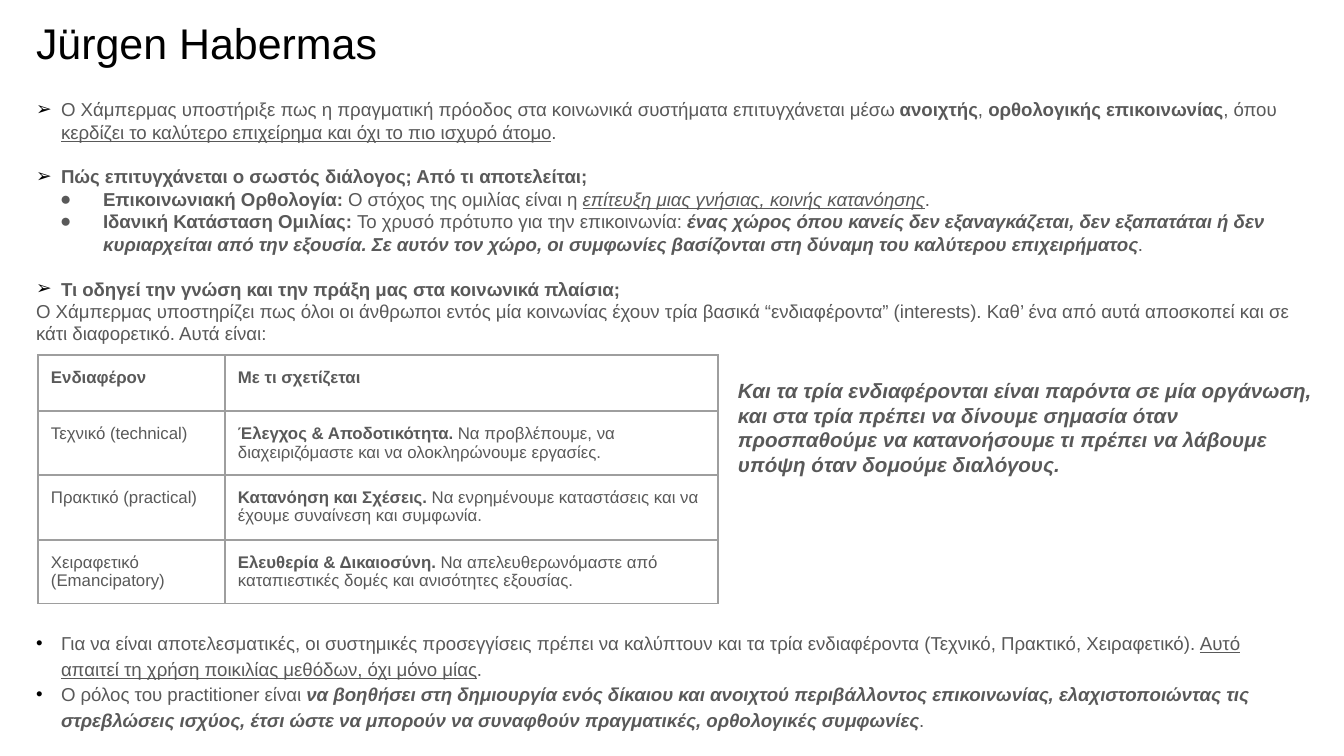
from pptx import Presentation
from pptx.dml.color import RGBColor
from pptx.enum.text import MSO_ANCHOR, MSO_AUTO_SIZE, PP_ALIGN
from pptx.oxml.ns import qn
from pptx.util import Emu, Pt
from lxml.etree import SubElement

EMU_PER_PX = 914400 / 134.4
GRAY, BLACK, BORDER = "595959", "000000", "9E9E9E"
INSET = 13
STYLES = {
    "": {},
    "b": {"bold": True},
    "u": {"underline": True},
    "iu": {"italic": True, "underline": True},
    "bi": {"bold": True, "italic": True},
}
BULLETS = {
    "arrow": ("➢", BLACK, 25, -25),
    "disc": ("●", GRAY, 67, -43),
    "dot": ("•", BLACK, 25, -25),
}
BODY = [
    ("arrow", {}, [
        ("Ο Χάμπερμας υποστήριξε πως η πραγματική πρόοδος στα κοινωνικά συστήματα επιτυγχάνεται μέσω ", ""),
        ("ανοιχτής", "b"), (", ", ""), ("ορθολογικής επικοινωνίας", "b"), (", όπου ", ""),
        ("κερδίζει το καλύτερο επιχείρημα και όχι το πιο ισχυρό άτομο", "u"), (".", "")]),
    ("arrow", {"space_before": Pt(12)}, [
        ("Πώς επιτυγχάνεται ο σωστός διάλογος; Από τι αποτελείται;", "b")]),
    ("disc", {}, [
        ("Επικοινωνιακή Ορθολογία: ", "b"), ("Ο στόχος της ομιλίας είναι η ", ""),
        ("επίτευξη μιας γνήσιας, κοινής κατανόησης", "iu"), (".", "")]),
    ("disc", {}, [
        ("Ιδανική Κατάσταση Ομιλίας: ", "b"), ("Το χρυσό πρότυπο για την επικοινωνία: ", ""),
        ("ένας χώρος όπου κανείς δεν εξαναγκάζεται, δεν εξαπατάται ή δεν κυριαρχείται από την εξουσία. "
         "Σε αυτόν τον χώρο, οι συμφωνίες βασίζονται στη δύναμη του καλύτερου επιχειρήματος", "bi"),
        (".", "")]),
    ("arrow", {"space_before": Pt(12)}, [
        ("Τι οδηγεί την γνώση και την πράξη μας στα κοινωνικά πλαίσια;", "b")]),
    (None, {}, [
        ("Ο Χάμπερμας υποστηρίζει πως όλοι οι άνθρωποι εντός μία κοινωνίας έχουν τρία βασικά “ενδιαφέροντα” "
         "(interests). Καθ’ ένα από αυτά αποσκοπεί και σε κάτι διαφορετικό. Αυτά είναι:", "")]),
    ("dot", {"space_before": Pt(152), "line_spacing": 1.15}, [
        ("Για να είναι αποτελεσματικές, οι συστημικές προσεγγίσεις πρέπει να καλύπτουν και τα τρία "
         "ενδιαφέροντα (Τεχνικό, Πρακτικό, Χειραφετικό). ", ""),
        ("Αυτό απαιτεί τη χρήση ποικιλίας μεθόδων, όχι μόνο μίας", "u"), (".", "")]),
    ("dot", {"line_spacing": 1.15}, [
        ("Ο ρόλος του practitioner είναι ", ""),
        ("να βοηθήσει στη δημιουργία ενός δίκαιου και ανοιχτού περιβάλλοντος επικοινωνίας, ελαχιστοποιώντας "
         "τις στρεβλώσεις ισχύος, έτσι ώστε να μπορούν να συναφθούν πραγματικές, ορθολογικές συμφωνίες", "bi"),
        (".", "")]),
]
INTERESTS = [
    ([("Ενδιαφέρον", "b")], [("Με τι σχετίζεται", "b")]),
    ([("Τεχνικό (technical)", "")],
     [("Έλεγχος & Αποδοτικότητα. ", "b"),
      ("Να προβλέπουμε, να διαχειριζόμαστε και να ολοκληρώνουμε εργασίες.", "")]),
    ([("Πρακτικό (practical)", "")],
     [("Κατανόηση και Σχέσεις. ", "b"),
      ("Να ενρημένουμε καταστάσεις και να έχουμε συναίνεση και συμφωνία.", "")]),
    ([("Χειραφετικό (Emancipatory)", "")],
     [("Ελευθερία & Δικαιοσύνη. ", "b"),
      ("Να απελευθερωνόμαστε από καταπιεστικές δομές και ανισότητες εξουσίας.", "")]),
]
CONCLUSION = ("Και τα τρία ενδιαφέρονται είναι παρόντα σε μία οργάνωση, και στα τρία πρέπει να δίνουμε σημασία "
              "όταν προσπαθούμε να κατανοήσουμε τι πρέπει να λάβουμε υπόψη όταν δομούμε διαλόγους.")


def px(value):
    return Emu(round(value * EMU_PER_PX))


def color(value):
    return RGBColor.from_string(value)


def set_attributes(target, values):
    for name, value in values.items():
        setattr(target, name, value)


def set_margins(target, inset):
    sides = ("left", "top", "right", "bottom")
    set_attributes(target, {f"margin_{side}": px(inset) for side in sides})


def add_runs(paragraph, runs, size, text_color=GRAY):
    for text, style in runs:
        run = paragraph.add_run()
        run.text = text
        set_attributes(run.font, {"name": "Arial", "size": Pt(size), **STYLES[style]})
        run.font.color.rgb = color(text_color)


def add_bullet(paragraph, kind):
    character, bullet_color, margin, indent = BULLETS[kind]
    properties = paragraph._p.get_or_add_pPr()
    properties.set("marL", str(px(margin)))
    properties.set("indent", str(px(indent)))
    fill = SubElement(properties, qn("a:buClr"))
    SubElement(fill, qn("a:srgbClr"), val=bullet_color)
    SubElement(properties, qn("a:buFont"), typeface="Arial")
    SubElement(properties, qn("a:buChar"), char=character)


def format_frame(frame, inset, anchor=MSO_ANCHOR.TOP):
    set_attributes(frame, {"word_wrap": True, "auto_size": MSO_AUTO_SIZE.NONE, "vertical_anchor": anchor})
    set_margins(frame, inset)


def add_title(slide, text):
    title = slide.shapes.title
    set_attributes(title, {"left": px(23), "top": px(0), "width": px(1292), "height": px(85)})
    format_frame(title.text_frame, INSET, MSO_ANCHOR.MIDDLE)
    paragraph = title.text_frame.paragraphs[0]
    paragraph.alignment = PP_ALIGN.LEFT
    add_runs(paragraph, [(text, "")], 23, BLACK)


def add_text(slide, box, paragraphs, size, inset):
    frame = slide.shapes.add_textbox(*map(px, box)).text_frame
    format_frame(frame, inset)
    for index, (bullet, spacing, runs) in enumerate(paragraphs):
        paragraph = frame.add_paragraph() if index else frame.paragraphs[0]
        set_attributes(paragraph, spacing)
        if bullet:
            add_bullet(paragraph, bullet)
        add_runs(paragraph, runs, size)


def add_borders(cell):
    properties = cell._tc.get_or_add_tcPr()
    for position, side in enumerate(("lnL", "lnR", "lnT", "lnB")):
        line = properties.makeelement(qn(f"a:{side}"), {"w": str(Pt(0.75))})
        fill = SubElement(line, qn("a:solidFill"))
        SubElement(fill, qn("a:srgbClr"), val=BORDER)
        properties.insert(position, line)


def add_interest_table(slide, box, column_widths, row_heights):
    table = slide.shapes.add_table(len(INTERESTS), len(column_widths), *map(px, box)).table
    set_attributes(table, {"first_row": False, "horz_banding": False})
    for column, width in zip(table.columns, column_widths):
        column.width = px(width)
    for row, height, contents in zip(table.rows, row_heights, INTERESTS):
        row.height = px(height)
        for cell, runs in zip(row.cells, contents):
            set_margins(cell, INSET)
            cell.fill.background()
            add_borders(cell)
            add_runs(cell.text_frame.paragraphs[0], runs, 9)


def main():
    presentation = Presentation()
    set_attributes(presentation, {"slide_width": px(1344), "slide_height": px(756)})
    slide = presentation.slides.add_slide(presentation.slide_layouts[5])
    add_title(slide, "Jürgen Habermas")
    add_text(slide, (23, 85, 1292, 644), BODY, 10, INSET)
    add_interest_table(slide, (38, 355, 680, 249), (187, 493), (56, 64, 65, 64))
    add_text(slide, (738, 378, 577, 191), [(None, {}, [(CONCLUSION, "bi")])], 11, 0)
    presentation.save("out.pptx")


if __name__ == "__main__":
    main()
